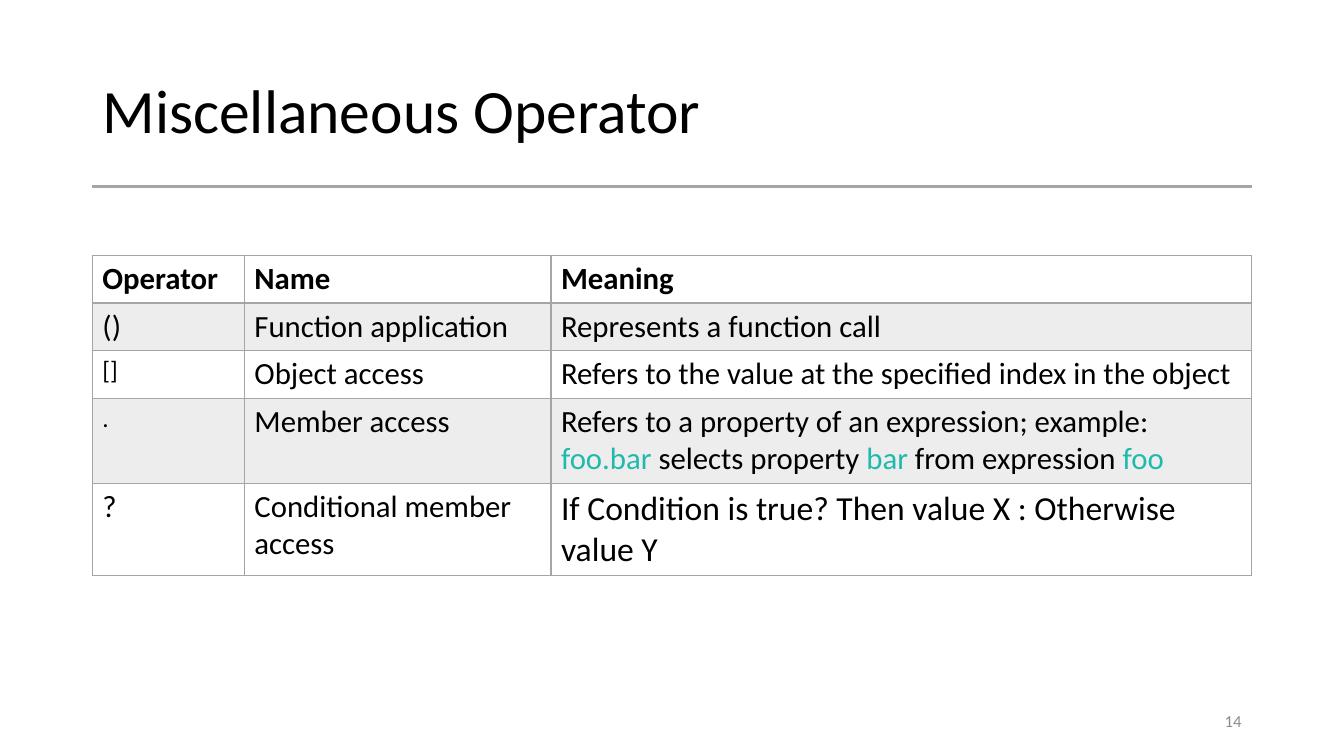
from lxml import etree
from pptx import Presentation, util as u
from pptx.dml.color import RGBColor
from pptx.enum import shapes, text
from pptx.oxml import ns

BLACK = RGBColor(0x00, 0x00, 0x00)
GRAY = RGBColor(0xA5, 0xA5, 0xA5)
BAND = RGBColor(0xED, 0xED, 0xED)
NUMBER_GRAY = RGBColor(0x8C, 0x8C, 0x8C)
TEAL = RGBColor(0x1F, 0xBA, 0xAC)

GRID_COLUMNS, GRID_ROWS = 160, 90
LEFT, WIDTH = 11, 138
RULE_ROW = 22.2

# Text between backticks is code.
OPERATORS = [
    ("Operator", "Name", "Meaning"),
    ("()", "Function application", "Represents a function call"),
    ("[]", "Object access",
     "Refers to the value at the specified index in the object"),
    (".", "Member access",
     "Refers to a property of an expression; example: "
     "`foo.bar` selects property `bar` from expression `foo`"),
    ("?", "Conditional member access",
     "If Condition is true? Then value X : Otherwise value Y"),
]
COLUMN_WIDTHS = [18.1, 36.5, 83.4]
ROW_HEIGHTS = [5.6, 5.6, 5.6, 10.1, 10.9]
SPECIAL_SIZES = {(2, 0): 18, (3, 0): 18, (4, 2): 24}


class SlideBuilder:
    """Places styled elements on a page by grid columns and rows."""

    font_name = "Calibri"

    def __init__(self, deck):
        self.column = deck.slide_width / GRID_COLUMNS
        self.row = deck.slide_height / GRID_ROWS
        self.page = deck.slides.add_slide(deck.slide_layouts[5])

    def across(self, columns):
        return u.Emu(round(columns * self.column))

    def down(self, rows):
        return u.Emu(round(rows * self.row))

    def area(self, left, top, width, height):
        return (self.across(left), self.down(top),
                self.across(width), self.down(height))

    def style(self, font, size, color=BLACK, bold=False):
        font.name, font.size, font.bold = self.font_name, u.Pt(size), bold
        font.color.rgb = color

    def title(self, wording, *area):
        box = self.page.shapes.title
        box.left, box.top, box.width, box.height = self.area(*area)
        frame = box.text_frame
        frame.text = wording
        frame.vertical_anchor = text.MSO_ANCHOR.MIDDLE
        para = frame.paragraphs[0]
        para.alignment = text.PP_ALIGN.LEFT
        para.line_spacing = 0.9
        self.style(para.font, 44)

    def rule(self, left, row, width):
        start, level, length, _ = self.area(left, row, width, 0)
        line = self.page.shapes.add_connector(
            shapes.MSO_CONNECTOR.STRAIGHT, start, level, start + length, level)
        line.line.color.rgb = GRAY
        line.line.width = u.Pt(1.5)
        etree.SubElement(line.element.spPr, ns.qn("a:effectLst"))

    def page_number(self, number, *area):
        frame = self.page.shapes.add_textbox(*self.area(*area)).text_frame
        frame.word_wrap = True
        frame.vertical_anchor = text.MSO_ANCHOR.MIDDLE
        para = frame.paragraphs[0]
        para.text = str(number)
        para.alignment = text.PP_ALIGN.RIGHT
        self.style(para.font, 12, NUMBER_GRAY)

    def table(self, left, top, rows, widths, heights, sizes):
        frame = self.page.shapes.add_table(
            len(rows), len(widths),
            *self.area(left, top, sum(widths), sum(heights)))
        grid = frame.table
        for column, width in zip(grid.columns, widths):
            column.width = self.across(width)
        for line, height in zip(grid.rows, heights):
            line.height = self.down(height)
        for r, wordings in enumerate(rows):
            for c, wording in enumerate(wordings):
                self.cell(grid.cell(r, c), wording, r, sizes.get((r, c), 22))

    def cell(self, cell, wording, row, size):
        self.borders(cell, {"L": 1, "R": 1, "T": 2 if row == 1 else 1,
                            "B": 2 if row == 0 else 1})
        if row % 2:
            cell.fill.solid()
            cell.fill.fore_color.rgb = BAND
        else:
            cell.fill.background()
        para = cell.text_frame.paragraphs[0]
        for index, piece in enumerate(wording.split("`")):
            if piece:
                span = para.add_run()
                span.text = piece
                self.style(span.font, size, TEAL if index % 2 else BLACK,
                           bold=row == 0)

    def borders(self, cell, widths):
        """Draw each side, keyed L, R, T or B, at its width in points."""
        properties = cell._tc.get_or_add_tcPr()
        for side, width in widths.items():
            line = etree.SubElement(properties, ns.qn(f"a:ln{side}"),
                                    w=str(u.Pt(width)))
            fill = etree.SubElement(line, ns.qn("a:solidFill"))
            etree.SubElement(fill, ns.qn("a:srgbClr"), val=str(GRAY))


def main():
    deck = Presentation()
    deck.slide_width = u.Inches(GRID_COLUMNS / 12)
    deck.slide_height = u.Inches(GRID_ROWS / 12)
    slide = SlideBuilder(deck)
    slide.rule(LEFT, RULE_ROW, WIDTH)
    slide.title("Miscellaneous Operator", LEFT, 4.8, WIDTH, RULE_ROW - 4.8)
    slide.table(LEFT, 30.4, OPERATORS, COLUMN_WIDTHS, ROW_HEIGHTS,
                SPECIAL_SIZES)
    slide.page_number(14, 113, 83.4, 36, 4.8)
    deck.save("out.pptx")


if __name__ == "__main__":
    main()
